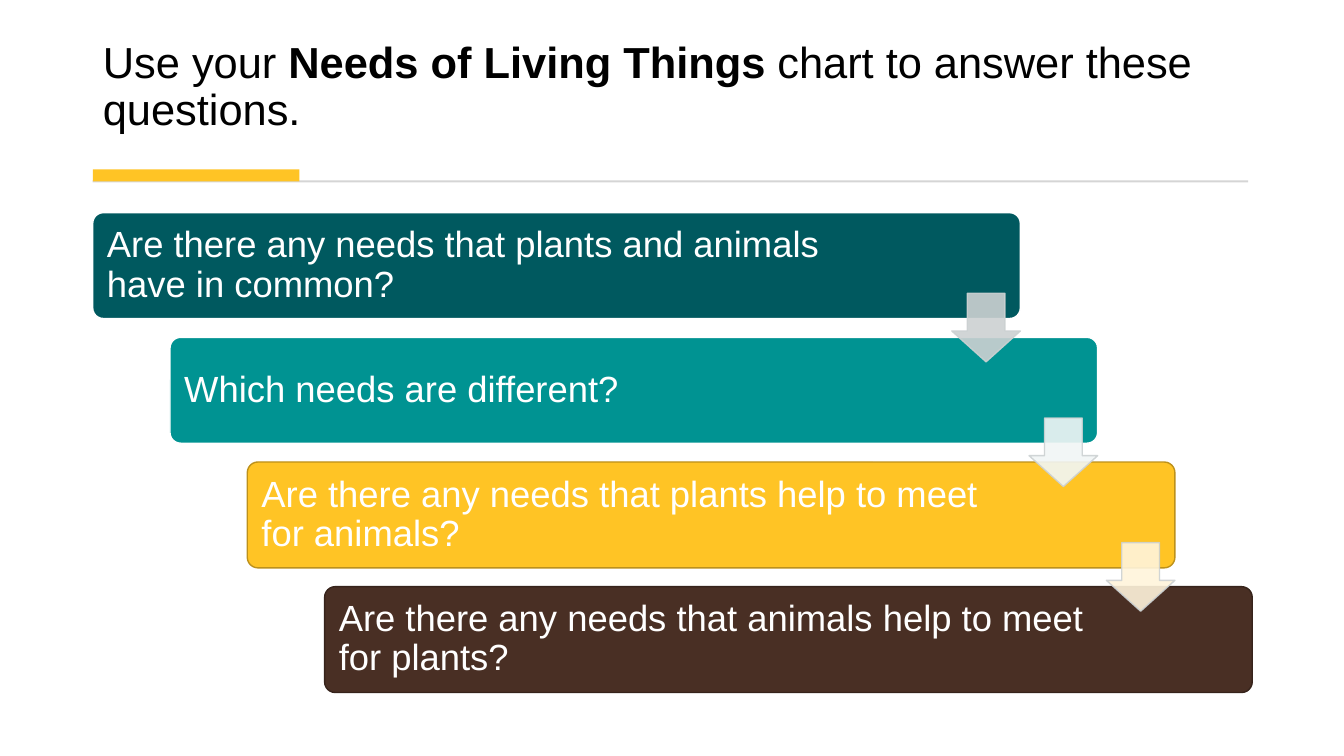
from lxml import etree
from pptx import Presentation
from pptx.dml.color import RGBColor
from pptx.enum.shapes import MSO_SHAPE
from pptx.enum.text import MSO_ANCHOR, MSO_AUTO_SIZE, PP_ALIGN
from pptx.oxml.ns import qn
from pptx.util import Inches, Pt

RECT, ROUND, DOWN = MSO_SHAPE.RECTANGLE, MSO_SHAPE.ROUNDED_RECTANGLE, MSO_SHAPE.DOWN_ARROW
BOTTOM, MIDDLE, LEFT = MSO_ANCHOR.BOTTOM, MSO_ANCHOR.MIDDLE, PP_ALIGN.LEFT

# Content: text runs are (words, bold)
TITLE = [("Use your ", False), ("Needs of Living Things", True),
         (" chart to answer these questions.", False)]
STEPS = [  # question, fill, line
    ("Are there any needs that plants and animals have in common?", "00595F", "FFFFFF"),
    ("Which needs are different?", "009392", "FFFFFF"),
    ("Are there any needs that plants help to meet for animals?", "FFC425", "BD911B"),
    ("Are there any needs that animals help to meet for plants?", "492F24", "36231B"),
]
ARROWS = ["CCD1D2", "F1F6F6", "FFF4DB"]
RULES = [  # place, fill
    ((0.92, 1.79, 11.46, 0.02), "D5D5D5"),
    ((0.92, 1.68, 2.05, 0.12), "FFC425"),
]

# Staircase measures
FIRST, LAST = (0.92, 2.11), (3.22, 5.82)
BAR_W, BAR_H = 9.2, 1.05
ARROW, DROP = 0.68, 0.8


def rgb(code):
    return RGBColor.from_string(code)


def fade(fill, share):
    """Set the opacity of a solid fill or line, in percent."""
    for color in fill.iter(qn("a:srgbClr")):
        etree.SubElement(color, qn("a:alpha")).set("val", str(share * 1000))


def write(shape, runs, size=26, color="FFFFFF", anchor=MIDDLE, pad=(0.1, 0.05, 0.1, 0.05)):
    frame = shape.text_frame
    frame.word_wrap = True
    frame.auto_size = MSO_AUTO_SIZE.NONE
    frame.vertical_anchor = anchor
    (frame.margin_left, frame.margin_top,
     frame.margin_right, frame.margin_bottom) = map(Inches, pad)
    para = frame.paragraphs[0]
    para.alignment = LEFT
    para.line_spacing = 0.9
    para.space_before = Pt(0)
    for words, bold in runs:
        run = para.add_run()
        run.text = words
        run.font.name = "Arial"
        run.font.size = Pt(size)
        run.font.bold = bold
        run.font.color.rgb = rgb(color)


def draw(slide, kind, place, fill, line=None, adjust=()):
    shape = slide.shapes.add_shape(kind, *map(Inches, place))
    shape.shadow.inherit = False
    shape.fill.solid()
    shape.fill.fore_color.rgb = rgb(fill)
    if line:
        shape.line.color.rgb = rgb(line)
        shape.line.width = Pt(1)
    else:
        shape.line.fill.background()
    for i, value in enumerate(adjust):
        shape.adjustments[i] = value
    return shape


def main():
    deck = Presentation()
    deck.slide_width, deck.slide_height = Inches(13.33), Inches(7.5)
    slide = deck.slides.add_slide(deck.slide_layouts[5])

    # Title and rule
    title = slide.shapes.title
    title.left, title.top, title.width, title.height = map(Inches, (0.92, 0.28, 11.49, 1.11))
    write(title, TITLE, size=31, color="000000", anchor=BOTTOM)
    for place, fill in RULES:
        draw(slide, RECT, place, fill)

    # Question bars, stepping down to the right
    gaps = len(STEPS) - 1
    spots = [tuple(a + (b - a) * i / gaps for a, b in zip(FIRST, LAST))
             for i in range(len(STEPS))]
    for (left, top), (words, fill, line) in zip(spots, STEPS):
        bar = draw(slide, ROUND, (left, top, BAR_W, BAR_H), fill, line, (0.1,))
        write(bar, [(words, False)], pad=(0.11, 0.11, 1.5, 0.11))

    # Arrows, flush with the right end of each bar
    for (left, top), fill in zip(spots, ARROWS):
        place = (left + BAR_W - ARROW, top + DROP, ARROW, ARROW)
        arrow = draw(slide, DOWN, place, fill, "CCD1D2", (0.55, 0.45))
        fade(arrow.element.spPr, 90)

    deck.save("out.pptx")


if __name__ == "__main__":
    main()
